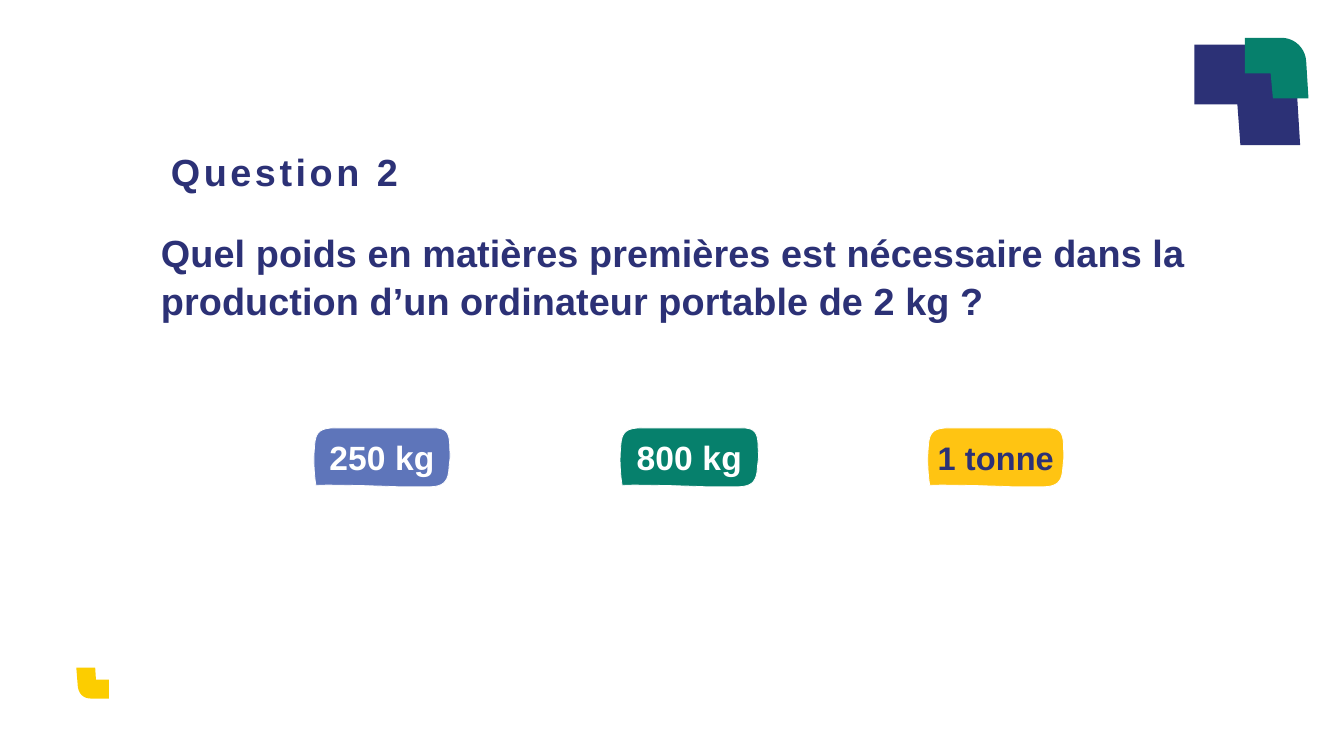
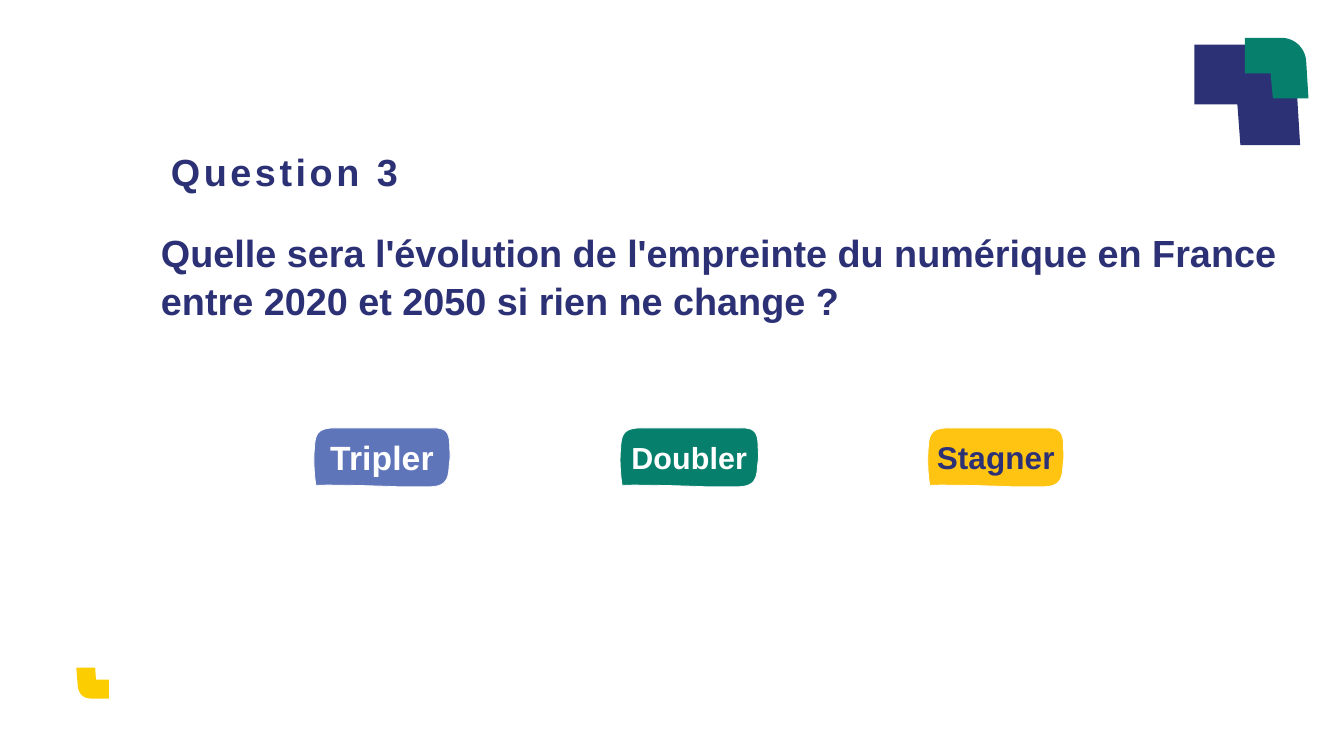
from dataclasses import dataclass

from pptx import Presentation
from pptx.dml.color import RGBColor
from pptx.enum.text import MSO_ANCHOR, MSO_AUTO_SIZE, PP_ALIGN
from pptx.util import Emu, Pt

PX = 9144  # 100 px to the inch
CURVE_STEPS = 10
TITLE_ONLY = 5


@dataclass(frozen=True)
class Theme:
    navy: str = "2C3176"
    green: str = "06806C"
    blue: str = "5E75BA"
    amber: str = "FFC412"
    yellow: str = "FCCD00"
    white: str = "FFFFFF"
    font: str = "Arial"
    heading_size: int = 36
    heading_leading: float = 1.04
    title_tracking: int = 340
    tight_tracking: int = 10


THEME = Theme()

# Outlines: a pair is a corner, six numbers are a Bézier curve to the last pair.
NAVY_MARK = [(1720, 192), (1715, 110), (1713, 82, 1690, 59, 1660, 59),
             (1580, 59), (1580, 138), (1637, 138), (1641, 192)]
GREEN_MARK = [(1731, 130), (1728, 81), (1727, 64, 1713, 50, 1695, 50),
              (1647, 50), (1647, 97), (1681, 97), (1684, 130)]
YELLOW_MARK = [(126, 883), (101, 883), (103, 908), (104, 917, 110, 924, 120, 924),
               (144, 924), (144, 899), (127, 899)]
BADGE = [(181, 28), (182, 43, 181, 42, 180, 54), (179, 74, 171, 79, 152, 79),
         (115, 79), (96, 78, 26, 76, 4, 77), (3, 72, 0, 48, 2, 28),
         (3, 9, 6, 1, 30, 1), (159, 1), (177, 1, 181, 7, 181, 28)]
BADGE_WIDTH, BADGE_TOP = 182, 565

# Left edge, width, fill and text colour of each answer badge
ANSWER_STYLES = [
    (414, 182, THEME.blue, THEME.white),
    (819, 185, THEME.green, THEME.white),
    (1226, 182, THEME.amber, THEME.navy),
]

QUESTIONS = [
    ("Question 2",
     "Quel poids en matières premières est nécessaire dans la production "
     "d’un ordinateur portable de 2 kg ?", THEME.tight_tracking,
     [("250 kg", 32), ("800 kg", 32), ("1 tonne", 31)]),
    ("Question 3",
     "Quelle sera l'évolution de l'empreinte du numérique en France "
     "entre 2020 et 2050 si rien ne change ?", 0,
     [("Tripler", 32), ("Doubler", 29), ("Stagner", 30)]),
]


def px(length):
    return Emu(round(length * PX))


def apply(target, **values):
    for name, value in values.items():
        setattr(target, name, value)


def flatten(outline):
    """Turn corners and curves into a plain list of points."""
    points = []
    for step in outline:
        if len(step) == 2:
            points.append(step)
            continue
        controls = [points[-1], step[:2], step[2:4], step[4:]]
        for i in range(1, CURVE_STEPS + 1):
            t = i / CURVE_STEPS
            weights = ((1 - t) ** 3, 3 * t * (1 - t) ** 2, 3 * t * t * (1 - t), t ** 3)
            points.append(tuple(sum(w * c[axis] for w, c in zip(weights, controls))
                                for axis in (0, 1)))
    return points


def draw_outline(shapes, outline, fill):
    start, *others = [(px(x), px(y)) for x, y in flatten(outline)]
    builder = shapes.build_freeform(*start, scale=1.0)
    builder.add_line_segments(others, close=True)
    shape = builder.convert_to_shape()
    shape.shadow.inherit = False
    shape.fill.solid()
    shape.fill.fore_color.rgb = RGBColor.from_string(fill)
    shape.line.fill.background()
    return shape


def write(shape, text, size, color, tracking, frame_format, paragraph_format):
    frame = shape.text_frame
    margins = dict.fromkeys(
        ("margin_left", "margin_top", "margin_right", "margin_bottom"), 0)
    apply(frame, **{**margins, "word_wrap": True,
                    "auto_size": MSO_AUTO_SIZE.NONE, **frame_format})
    paragraph = frame.paragraphs[0]
    apply(paragraph, **{"space_before": Pt(0), **paragraph_format})
    run = paragraph.add_run()
    run.text = text
    apply(run.font, name=THEME.font, size=Pt(size), bold=True)
    run.font.color.rgb = RGBColor.from_string(color)
    if tracking:
        run.font._element.set("spc", str(tracking))


def write_heading(shape, box, text, tracking, **margins):
    left, top, width, height = map(px, box)
    apply(shape, left=left, top=top, width=width, height=height)
    write(shape, text, THEME.heading_size, THEME.navy, tracking,
          {"vertical_anchor": MSO_ANCHOR.TOP, **margins},
          {"alignment": PP_ALIGN.LEFT, "line_spacing": THEME.heading_leading})


def add_corner_marks(slide):
    draw_outline(slide.shapes, YELLOW_MARK, THEME.yellow)
    emblem = slide.shapes.add_group_shape()
    draw_outline(emblem.shapes, NAVY_MARK, THEME.navy)
    draw_outline(emblem.shapes, GREEN_MARK, THEME.green)


def add_answer(slide, left, width, fill, color, text, size):
    stretch = width / BADGE_WIDTH
    outline = [tuple(BADGE_TOP + value if i % 2 else left + value * stretch
                     for i, value in enumerate(step)) for step in BADGE]
    badge = draw_outline(slide.shapes, outline, fill)
    badge.line.width = Pt(0.75)
    badge.line.color.rgb = RGBColor.from_string(THEME.white)
    write(badge, text, size, color, THEME.tight_tracking,
          {"vertical_anchor": MSO_ANCHOR.MIDDLE}, {"alignment": PP_ALIGN.CENTER})


def add_question(deck, title, question, tracking, answers):
    slide = deck.slides.add_slide(deck.slide_layouts[TITLE_ONLY])
    add_corner_marks(slide)
    write_heading(slide.shapes.title, (122, 192, 767, 62), title,
                  THEME.title_tracking, margin_left=px(104), margin_top=px(2))
    question_box = slide.shapes.add_textbox(0, 0, 0, 0)
    write_heading(question_box, (213, 302, 1496, 121), question, tracking)
    for style, answer in zip(ANSWER_STYLES, answers):
        add_answer(slide, *style, *answer)


def main():
    deck = Presentation()
    apply(deck, slide_width=px(1778), slide_height=px(1000))
    for question in QUESTIONS:
        add_question(deck, *question)
    deck.save("out.pptx")


if __name__ == "__main__":
    main()
